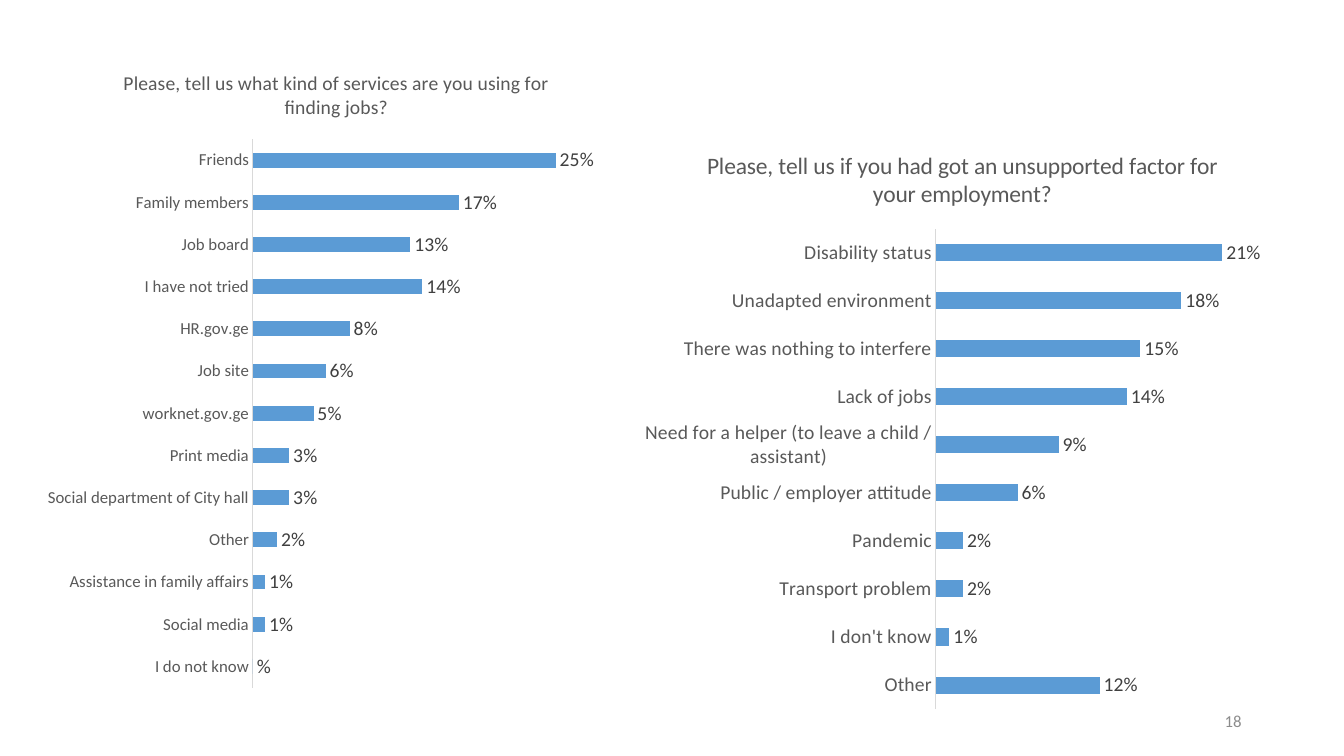
from lxml import etree
from pptx import Presentation
from pptx.chart.data import CategoryChartData
from pptx.dml.color import RGBColor
from pptx.enum import chart as kinds, text
from pptx.oxml import ns
from pptx.util import Pt

COLORS = {"bar": "5B9BD5", "caption": "595959", "value": "404040",
          "axis": "D9D9D9", "number": "8C8C8C", "base": "000000"}
FONT = "Calibri"

SERVICES = {
    "I do not know": 0, "Social media": 0.01, "Assistance in family affairs": 0.01,
    "Other": 0.02, "Social department of City hall": 0.03, "Print media": 0.03,
    "worknet.gov.ge": 0.05, "Job site": 0.06, "HR.gov.ge": 0.08, "I have not tried": 0.14,
    "Job board": 0.13, "Family members": 0.17, "Friends": 0.25,
}
FACTORS = {
    "Other": 0.12, "I don't know": 0.01, "Transport problem": 0.02, "Pandemic": 0.02,
    "Public / employer attitude": 0.06,
    "Need for a helper (to leave a child / assistant)": 0.09, "Lack of jobs": 0.14,
    "There was nothing to interfere": 0.15, "Unadapted environment": 0.18,
    "Disability status": 0.21,
}


def style_font(font, size, color):
    """Set typeface, size in points and named colour."""
    font.name, font.size, font.bold = FONT, Pt(size), False
    font.color.rgb = RGBColor.from_string(COLORS[color])


def place_plot(chart, area):
    """Fix the inner plot area as fractions of the chart: x, y, width, height."""
    plot_area = chart.plots[0]._element.getparent()
    for old in plot_area.findall(ns.qn("c:layout")):
        plot_area.remove(old)
    layout = etree.Element(ns.qn("c:layout"))
    manual = etree.SubElement(layout, ns.qn("c:manualLayout"))
    settings = [("layoutTarget", "inner"), ("xMode", "edge"), ("yMode", "edge"),
                *zip("xywh", area)]
    for tag, value in settings:
        etree.SubElement(manual, ns.qn(f"c:{tag}")).set("val", str(value))
    plot_area.insert(0, layout)


def add_bar_chart(page, box, question, answers, sizes, top, number_format, area):
    """Draw one question with its answers as horizontal bars inside the box."""
    data = CategoryChartData(number_format=number_format)
    data.categories = list(answers)
    data.add_series("Series 1", list(answers.values()))
    chart = page.shapes.add_chart(kinds.XL_CHART_TYPE.BAR_CLUSTERED,
                                  *map(Pt, box), data).chart
    title_size, axis_size = sizes
    style_font(chart.font, axis_size, "base")
    chart.has_legend = False
    chart.has_title = True
    para = chart.chart_title.text_frame.paragraphs[0]
    para.text = question
    style_font(para.runs[0].font, title_size, "caption")
    chart.chart_title.include_in_layout = False

    categories = chart.category_axis
    categories.major_tick_mark = kinds.XL_TICK_MARK.NONE
    categories.format.line.color.rgb = RGBColor.from_string(COLORS["axis"])
    categories.format.line.width = Pt(0.75)
    style_font(categories.tick_labels.font, axis_size, "caption")

    values = chart.value_axis
    values.minimum_scale, values.maximum_scale = 0, top
    values.has_major_gridlines = False
    values.tick_labels.number_format = number_format
    values.visible = False

    plot = chart.plots[0]
    plot.gap_width = 182
    plot.vary_by_categories = False
    fill = plot.series[0].format.fill
    fill.solid()
    fill.fore_color.rgb = RGBColor.from_string(COLORS["bar"])
    plot.has_data_labels = True
    labels = plot.data_labels
    labels.show_value = True
    labels.position = kinds.XL_LABEL_POSITION.OUTSIDE_END
    labels.number_format, labels.number_format_is_linked = number_format, False
    style_font(labels.font, 14, "value")
    place_plot(chart, area)


def add_page_number(page, box, number):
    """Write the page number at the right of the box."""
    frame = page.shapes.add_textbox(*map(Pt, box)).text_frame
    frame.word_wrap = True
    frame.vertical_anchor = text.MSO_ANCHOR.MIDDLE
    para = frame.paragraphs[0]
    para.text = number
    para.alignment = text.PP_ALIGN.RIGHT
    style_font(para.runs[0].font, 12, "number")


def main():
    """Build the slide and save it."""
    deck = Presentation()
    deck.slide_width, deck.slide_height = Pt(960), Pt(540)
    page = deck.slides.add_slide(deck.slide_layouts[6])
    add_page_number(page, (678, 500.5, 216, 28.75), "18")
    add_bar_chart(page, (27.5, 34, 425.5, 466.5),
                  "Please, tell us what kind of services are you using for finding jobs?",
                  SERVICES, (14, 12), 0.3, "####%", (0.36, 0.14, 0.61, 0.84))
    add_bar_chart(page, (453, 91.5, 468.5, 423.5),
                  "Please, tell us if you had got an unsupported factor for your employment?",
                  FACTORS, (16.8, 14), 0.25, "###0%", (0.46, 0.17, 0.52, 0.81))
    deck.save("out.pptx")


if __name__ == "__main__":
    main()
